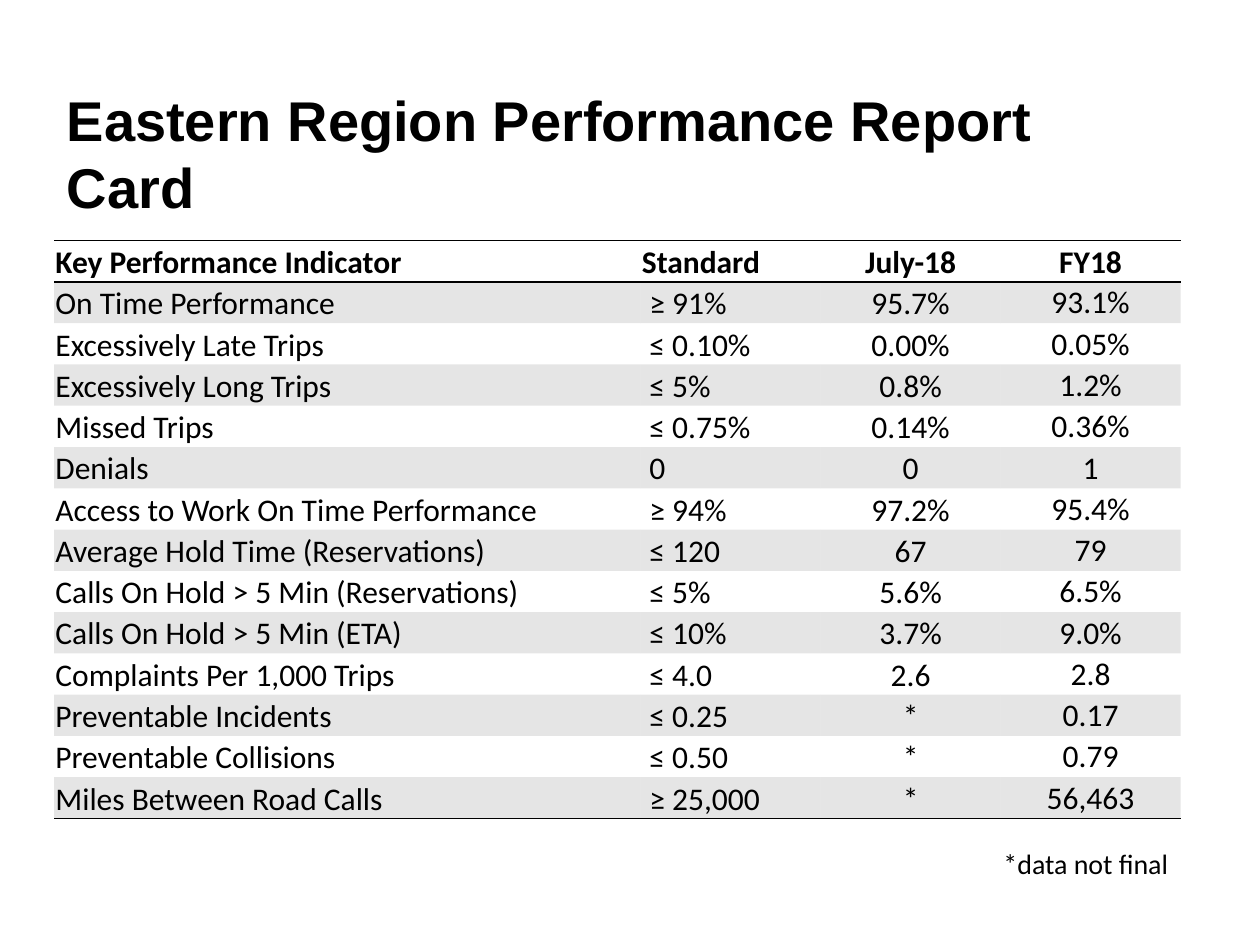
from dataclasses import dataclass

from lxml import etree
from pptx import Presentation
from pptx.dml.color import RGBColor
from pptx.enum.text import MSO_ANCHOR, MSO_AUTO_SIZE, PP_ALIGN
from pptx.oxml.ns import qn
from pptx.util import Inches, Pt

LEFT, CENTER, RIGHT = PP_ALIGN.LEFT, PP_ALIGN.CENTER, PP_ALIGN.RIGHT
MIDDLE, BOTTOM = MSO_ANCHOR.MIDDLE, MSO_ANCHOR.BOTTOM
FIXED_SIZE = MSO_AUTO_SIZE.NONE
TITLE_ONLY = 5
PLAIN_TABLE_STYLE = "{2D5ABB26-0587-4C30-8999-92F81FD0307C}"


@dataclass(frozen=True)
class Theme:
    """Colours, fonts and type sizes of the slide."""
    ink: str = "000000"
    band: str = "808080"
    band_alpha: int = 20
    title_font: str = "Arial"
    body_font: str = "Calibri"
    title_size: int = 32
    table_size: int = 18
    note_size: int = 16
    rule_width: int = 1


THEME = Theme()
COLUMN_WIDTHS = (4.66, 1.43, 1.43, 1.43)
ALIGNMENTS = (LEFT, LEFT, CENTER, CENTER)
HEADER = ("Key Performance Indicator", "Standard", "July-18", "FY18")
INDICATORS = (
    ("On Time Performance", "≥ 91%", "95.7%", "93.1%"),
    ("Excessively Late Trips", "≤ 0.10%", "0.00%", "0.05%"),
    ("Excessively Long Trips", "≤ 5%", "0.8%", "1.2%"),
    ("Missed Trips", "≤ 0.75%", "0.14%", "0.36%"),
    ("Denials", "0", "0", "1"),
    ("Access to Work On Time Performance", "≥ 94%", "97.2%", "95.4%"),
    ("Average Hold Time (Reservations)", "≤ 120", "67", "79"),
    ("Calls On Hold > 5 Min (Reservations)", "≤ 5%", "5.6%", "6.5%"),
    ("Calls On Hold > 5 Min (ETA)", "≤ 10%", "3.7%", "9.0%"),
    ("Complaints Per 1,000 Trips", "≤ 4.0", "2.6", "2.8"),
    ("Preventable Incidents", "≤ 0.25", "*", "0.17"),
    ("Preventable Collisions", "≤ 0.50", "*", "0.79"),
    ("Miles Between Road Calls", "≥ 25,000", "*", "56,463"),
)


def set_text(text_frame, text, font_name, size, bold=False, alignment=LEFT):
    """Write one formatted paragraph into a text frame."""
    text_frame.text = text
    paragraph = text_frame.paragraphs[0]
    paragraph.alignment = alignment
    font = paragraph.runs[0].font
    font.name, font.size, font.bold = font_name, Pt(size), bold
    font.color.rgb = RGBColor.from_string(THEME.ink)


def add_rule(cell, side):
    """Draw a border on one side of a cell, given as lnT or lnB."""
    line = etree.SubElement(cell._tc.get_or_add_tcPr(), qn(f"a:{side}"), w=str(Pt(THEME.rule_width)))
    fill = etree.SubElement(line, qn("a:solidFill"))
    etree.SubElement(fill, qn("a:srgbClr"), val=THEME.ink)


def fill_cell(cell, banded):
    """Give a cell the translucent band colour or no fill."""
    if not banded:
        cell.fill.background()
        return
    cell.fill.solid()
    cell.fill.fore_color.rgb = RGBColor.from_string(THEME.band)
    color = cell._tc.tcPr.find(f"{qn('a:solidFill')}/{qn('a:srgbClr')}")
    etree.SubElement(color, qn("a:alpha"), val=str(THEME.band_alpha * 1000))


def format_cell(cell, text, row, column):
    """Write and style one table cell by its place in the grid."""
    is_header = row == 0
    cell.margin_left = Inches(0.07 if column == 1 and not is_header else 0.01)
    cell.margin_right = cell.margin_top = Inches(0.01)
    cell.margin_bottom = 0
    cell.vertical_anchor = MIDDLE if column == 3 and not is_header else BOTTOM
    set_text(cell.text_frame, text, THEME.body_font, THEME.table_size, is_header, ALIGNMENTS[column])
    if is_header:
        add_rule(cell, "lnT")
    if row in (0, len(INDICATORS)):
        add_rule(cell, "lnB")
    fill_cell(cell, row % 2 == 1)


def place_title(slide, left, top, width, height):
    """Place and format the slide title."""
    title = slide.shapes.title
    title.left, title.top, title.width, title.height = left, top, width, height
    text_frame = title.text_frame
    text_frame.auto_size = FIXED_SIZE
    text_frame.vertical_anchor = MIDDLE
    set_text(text_frame, "Eastern Region Performance Report Card",
             THEME.title_font, THEME.title_size, bold=True)


def add_report_table(slide, left, top, width, height):
    """Add the banded table of performance indicators."""
    rows = (HEADER, *INDICATORS)
    table = slide.shapes.add_table(len(rows), len(HEADER), left, top, width, height).table
    table._tbl.tblPr.find(qn("a:tableStyleId")).text = PLAIN_TABLE_STYLE
    table.first_row = table.horz_banding = False
    for column, share in zip(table.columns, COLUMN_WIDTHS):
        column.width = int(width * share / sum(COLUMN_WIDTHS))
    for row, texts in enumerate(rows):
        for column, text in enumerate(texts):
            format_cell(table.cell(row, column), text, row, column)


def add_footnote(slide, left, top, width, height):
    """Add the right-aligned note under the table."""
    text_frame = slide.shapes.add_textbox(left, top, width, height).text_frame
    text_frame.word_wrap = True
    set_text(text_frame, "*data not final", THEME.body_font, THEME.note_size, alignment=RIGHT)


def main():
    """Build and save the report card slide."""
    presentation = Presentation()
    presentation.slide_width, presentation.slide_height = Inches(10), Inches(7.5)
    slide = presentation.slides.add_slide(presentation.slide_layouts[TITLE_ONLY])
    place_title(slide, Inches(0.43), Inches(0.89), Inches(8.39), Inches(0.64))
    add_report_table(slide, Inches(0.43), Inches(1.91), Inches(8.94), Inches(4.59))
    add_footnote(slide, Inches(7.16), Inches(6.67), Inches(2.21), Inches(0.37))
    presentation.save("out.pptx")


if __name__ == "__main__":
    main()
